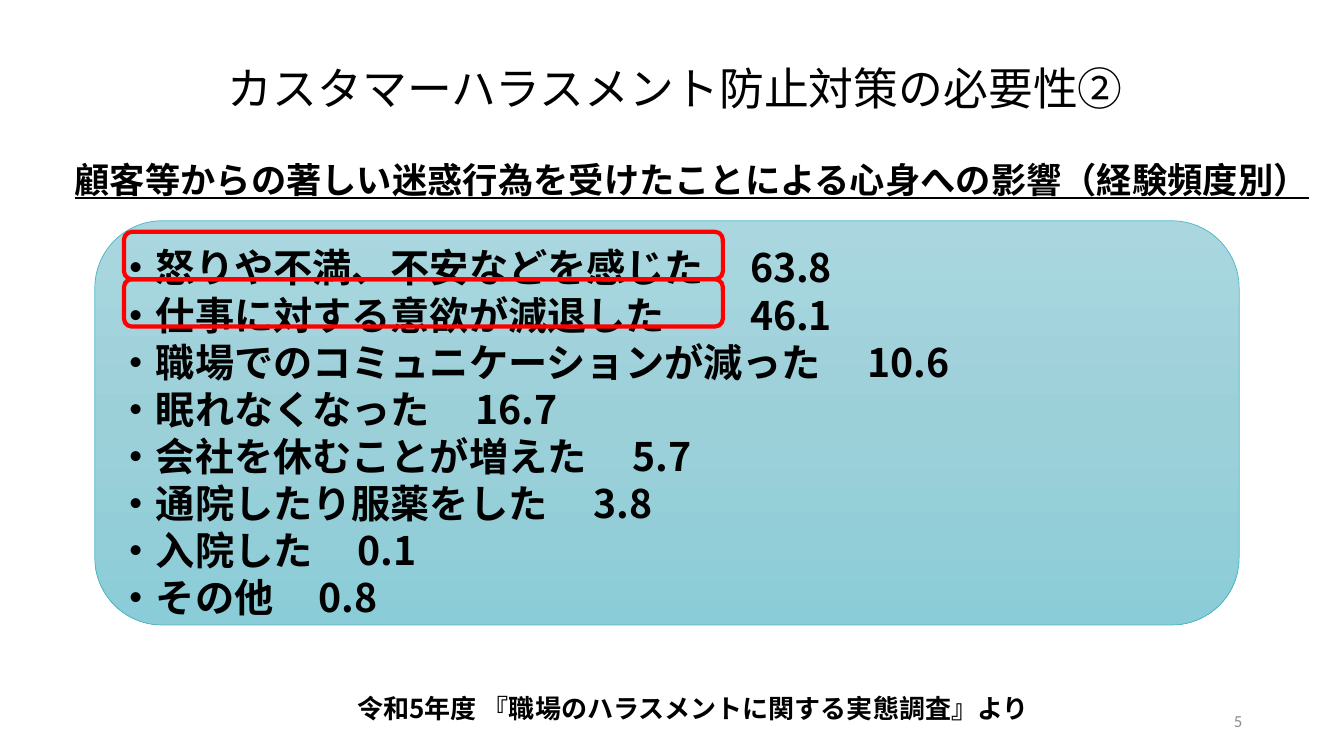
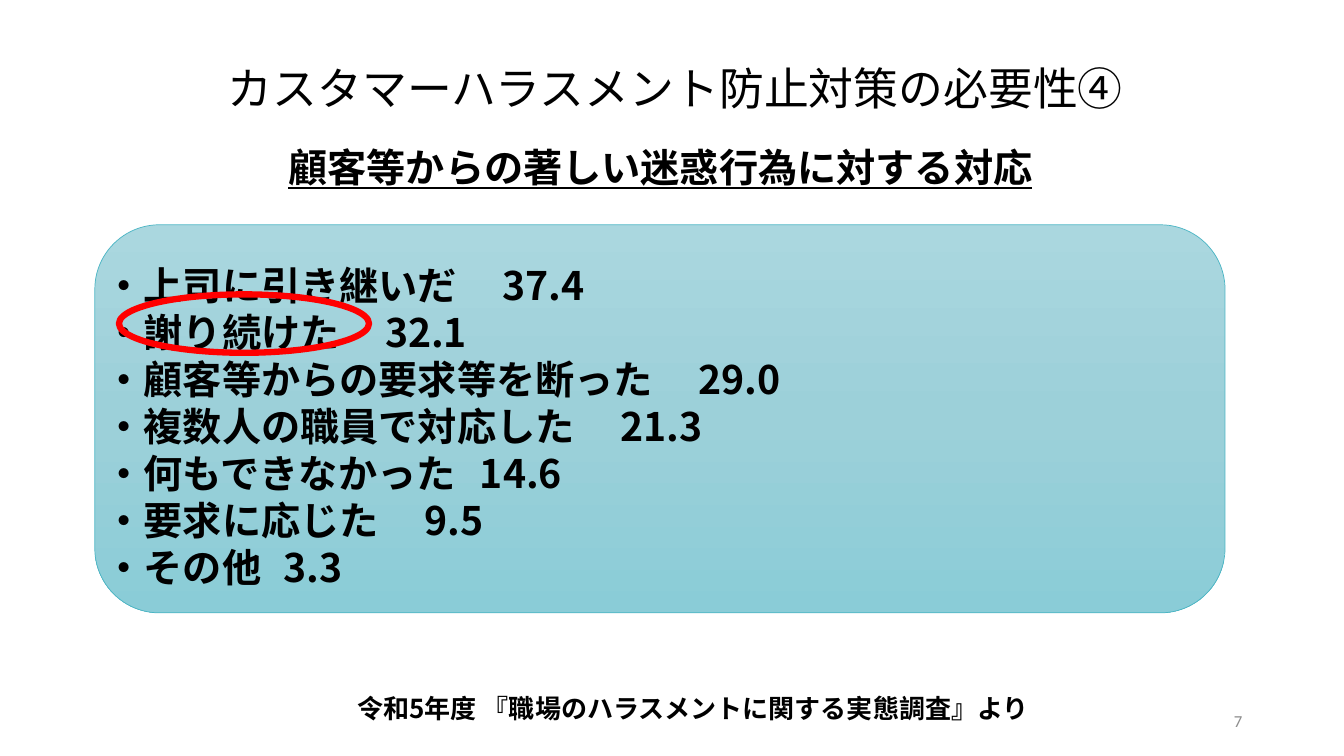
from copy import deepcopy
from dataclasses import dataclass

from pptx import Presentation
from pptx.dml.color import RGBColor
from pptx.enum.shapes import MSO_SHAPE
from pptx.enum.text import MSO_ANCHOR, PP_ALIGN
from pptx.oxml.ns import qn
from pptx.slide import Slide
from pptx.text.text import TextFrame
from pptx.util import Inches, Pt

# Shared style
BLACK = RGBColor(0x00, 0x00, 0x00)
GREY = RGBColor(0x8C, 0x8C, 0x8C)
RED = RGBColor(0xFF, 0x00, 0x00)
PANEL_LINE = RGBColor(0x4A, 0xB5, 0xC4)
PANEL_STOPS = (
    (0.0, RGBColor(0xAA, 0xD7, 0xDF)),
    (0.5, RGBColor(0x9C, 0xD0, 0xD9)),
    (1.0, RGBColor(0x8A, 0xCC, 0xD7)),
)
JAPANESE = "Noto Sans CJK JP"
LATIN = "Calibri"
ROUNDED = MSO_SHAPE.ROUNDED_RECTANGLE
OVAL = MSO_SHAPE.OVAL
LEFT, CENTER, RIGHT = PP_ALIGN.LEFT, PP_ALIGN.CENTER, PP_ALIGN.RIGHT
TOP, MIDDLE, BOTTOM = MSO_ANCHOR.TOP, MSO_ANCHOR.MIDDLE, MSO_ANCHOR.BOTTOM

SLIDE_WIDTH, SLIDE_HEIGHT = 13.33, 7.5
TITLE_ONLY = 5
ROW_SIZE = 28
ROW_PITCH = 33.6
SOURCE = "令和5年度 『職場のハラスメントに関する実態調査』より"


@dataclass(frozen=True)
class Area:
    left: float
    top: float
    width: float
    height: float

    def emu(self) -> tuple[int, int, int, int]:
        return (Inches(self.left), Inches(self.top),
                Inches(self.width), Inches(self.height))


@dataclass(frozen=True)
class Style:
    size: float
    font: str = JAPANESE
    color: RGBColor = BLACK
    bold: bool = False
    underline: bool = False
    align: PP_ALIGN = LEFT
    anchor: MSO_ANCHOR = TOP
    spacing: float = 1.0


@dataclass(frozen=True)
class Row:
    label: str
    value: str
    gap: float = 1.15  # in character widths


@dataclass(frozen=True)
class Mark:
    kind: MSO_SHAPE
    area: Area
    weight: float


@dataclass(frozen=True)
class Survey:
    title: str
    heading: str
    heading_size: float
    heading_area: Area
    panel: Area
    rows_area: Area
    rows: tuple[Row, ...]
    marks: tuple[Mark, ...]
    number: str


TITLE_AREA = Area(2.16, 0.55, 9.21, 0.64)
SOURCE_AREA = Area(3.18, 6.91, 7.39, 0.56)
NUMBER_AREA = Area(9.42, 6.95, 3, 0.4)
TITLE_STYLE = Style(32)
ROW_STYLE = Style(ROW_SIZE, bold=True)
SOURCE_STYLE = Style(18.6, bold=True, align=CENTER, spacing=0.7)
NUMBER_STYLE = Style(12, LATIN, GREY, align=RIGHT, anchor=MIDDLE)

SURVEYS = (
    Survey(
        "カスタマーハラスメント防止対策の必要性②",
        "顧客等からの著しい迷惑行為を受けたことによる心身への影響（経験頻度別）",
        25.2,
        Area(0.55, 1.3, 12.62, 0.74),
        Area(0.94, 2.19, 11.35, 4.01),
        Area(1.06, 2.37, 11.21, 3.83),
        (
            Row("怒りや不満、不安などを感じた", "63.8"),
            Row("仕事に対する意欲が減退した", "46.1", 2.15),
            Row("職場でのコミュニケーションが減った", "10.6"),
            Row("眠れなくなった", "16.7"),
            Row("会社を休むことが増えた", "5.7"),
            Row("通院したり服薬をした", "3.8"),
            Row("入院した", "0.1"),
            Row("その他", "0.8"),
        ),
        tuple(Mark(ROUNDED, Area(1.23, 2.3 + 0.47 * line, 5.94, 0.47), 3)
              for line in range(2)),
        "5",
    ),
    Survey(
        "カスタマーハラスメント防止対策の必要性④",
        "顧客等からの著しい迷惑行為に対する対応",
        28,
        Area(1.24, 1.2, 10.62, 0.74),
        Area(0.94, 2.23, 11.21, 3.85),
        Area(0.94, 2.54, 11.21, 3.5),
        (
            Row("上司に引き継いだ", "37.4"),
            Row("謝り続けた", "32.1"),
            Row("顧客等からの要求等を断った", "29.0"),
            Row("複数人の職員で対応した", "21.3"),
            Row("何もできなかった", "14.6", 0.57),
            Row("要求に応じた", "9.5"),
            Row("その他", "3.3", 0.57),
        ),
        (Mark(OVAL, Area(1.18, 2.92, 2.48, 0.58), 4.5),),
        "7",
    ),
)


# Text
def prepare(frame: TextFrame, anchor: MSO_ANCHOR) -> None:
    frame.word_wrap = True
    frame.vertical_anchor = anchor
    frame.margin_left = frame.margin_right = Inches(0.1)
    frame.margin_top = frame.margin_bottom = Inches(0.05)


def add_span(para, text: str, style: Style) -> None:
    span = para.add_run()
    span.text = text
    font = span.font
    font.name, font.size, font.color.rgb = style.font, Pt(style.size), style.color
    font.bold, font.underline = style.bold, style.underline
    east_asian = span._r.get_or_add_rPr().makeelement(
        qn("a:ea"), {"typeface": style.font})
    font._element.find(qn("a:latin")).addnext(east_asian)


def write(frame: TextFrame, text: str, style: Style) -> None:
    prepare(frame, style.anchor)
    para = frame.paragraphs[0]
    para.alignment = style.align
    para.line_spacing = style.spacing
    add_span(para, text, style)


def add_text(page: Slide, area: Area, text: str, style: Style) -> None:
    write(page.shapes.add_textbox(*area.emu()).text_frame, text, style)


def add_rows(page: Slide, area: Area, rows: tuple[Row, ...]) -> None:
    frame = page.shapes.add_textbox(*area.emu()).text_frame
    prepare(frame, TOP)
    for index, row in enumerate(rows):
        para = frame.add_paragraph() if index else frame.paragraphs[0]
        para.line_spacing = Pt(ROW_PITCH)
        label = "・" + row.label
        # The value starts a set gap after the full-width label
        stop = Pt((len(label) + row.gap) * ROW_SIZE)
        props = para._p.get_or_add_pPr()
        tabs = props.makeelement(qn("a:tabLst"), {})
        tabs.append(tabs.makeelement(qn("a:tab"), {"pos": str(stop), "algn": "l"}))
        props.append(tabs)
        add_span(para, f"{label}\t{row.value}", ROW_STYLE)


# Shapes
def add_panel(page: Slide, area: Area) -> None:
    panel = page.shapes.add_shape(ROUNDED, *area.emu())
    panel.shadow.inherit = False
    panel.line.color.rgb = PANEL_LINE
    panel.line.width = Pt(0.5)
    panel.fill.gradient()
    panel.fill.gradient_angle = 270
    stop_list = panel._element.spPr.find(qn("a:gradFill")).find(qn("a:gsLst"))
    stop_list.insert(1, deepcopy(stop_list[0]))
    for stop, (position, color) in zip(panel.fill.gradient_stops, PANEL_STOPS):
        stop.position = position
        stop.color.rgb = color


def add_mark(page: Slide, mark: Mark) -> None:
    outline = page.shapes.add_shape(mark.kind, *mark.area.emu())
    outline.shadow.inherit = False
    outline.fill.background()
    outline.line.color.rgb = RED
    outline.line.width = Pt(mark.weight)


# Slides
def add_survey(deck, survey: Survey) -> None:
    page = deck.slides.add_slide(deck.slide_layouts[TITLE_ONLY])
    title = page.shapes.title
    title.left, title.top, title.width, title.height = TITLE_AREA.emu()
    write(title.text_frame, survey.title, TITLE_STYLE)

    add_panel(page, survey.panel)
    heading_style = Style(survey.heading_size, bold=True, underline=True,
                          align=CENTER, anchor=BOTTOM, spacing=0.9)
    add_text(page, survey.heading_area, survey.heading, heading_style)
    add_rows(page, survey.rows_area, survey.rows)
    for mark in survey.marks:
        add_mark(page, mark)
    add_text(page, SOURCE_AREA, SOURCE, SOURCE_STYLE)
    add_text(page, NUMBER_AREA, survey.number, NUMBER_STYLE)


def main() -> None:
    deck = Presentation()
    deck.slide_width = Inches(SLIDE_WIDTH)
    deck.slide_height = Inches(SLIDE_HEIGHT)
    for survey in SURVEYS:
        add_survey(deck, survey)
    deck.save("out.pptx")


if __name__ == "__main__":
    main()
